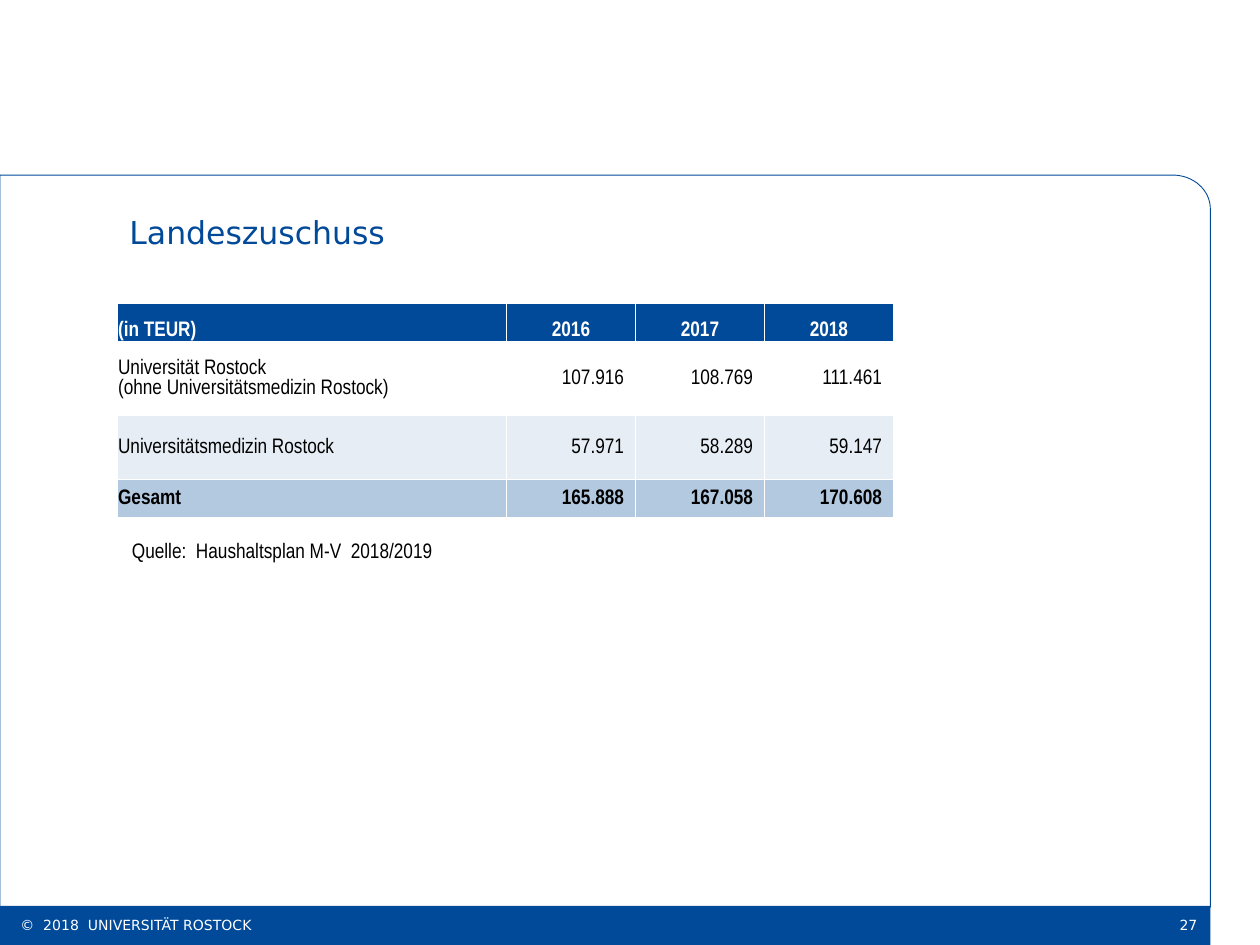
from dataclasses import dataclass
from math import cos, pi, sin

from lxml.etree import SubElement
from pptx import Presentation
from pptx.dml.color import RGBColor
from pptx.enum.shapes import MSO_SHAPE
from pptx.enum.text import MSO_ANCHOR, PP_ALIGN
from pptx.oxml.ns import qn
from pptx.util import Cm, Pt

BLUE, WHITE, BLACK = "004A99", "FFFFFF", "000000"
SANS, SLIM = "DejaVu Sans", "Arial Narrow"
LEFT, MID, RIGHT = PP_ALIGN.LEFT, PP_ALIGN.CENTER, PP_ALIGN.RIGHT


@dataclass
class Label:
    text: str
    box: tuple
    size: int
    face: str
    tint: str
    align: PP_ALIGN = LEFT
    anchor: MSO_ANCHOR = MSO_ANCHOR.TOP
    inset: float = 0.25


@dataclass
class Row:
    cells: tuple
    height: float
    fill: str = ""
    tint: str = BLACK
    bold: bool = False
    head: bool = False


def color(tint: str) -> RGBColor:
    return RGBColor.from_string(tint)


def style(para, size: int, face: str, tint: str, align, bold: bool = False) -> None:
    para.alignment = align
    font = para.font
    font.size, font.name, font.bold = Pt(size), face, bold
    font.color.rgb = color(tint)


def write(shape, label: Label) -> None:
    shape.left, shape.top, shape.width, shape.height = map(Cm, label.box)
    frame = shape.text_frame
    frame.word_wrap = True
    frame.vertical_anchor = label.anchor
    frame.margin_left = Cm(label.inset)
    frame.text = label.text
    style(frame.paragraphs[0], label.size, label.face, label.tint, label.align)


def add_label(slide, label: Label) -> None:
    write(slide.shapes.add_textbox(0, 0, 0, 0), label)


def add_bar(slide) -> None:
    bar = slide.shapes.add_shape(MSO_SHAPE.RECTANGLE, 0, Cm(18.26), Cm(24.4), Cm(0.79))
    bar.shadow.inherit = False
    bar.fill.solid()
    bar.fill.fore_color.rgb = color(BLUE)
    bar.line.fill.background()


def add_frame(slide, top: float, right: float, low: float) -> None:
    """Outline whose upper right corner is a quarter ellipse."""
    wide, high, steps = 0.76, 0.68, 16
    turns = [pi / 2 * (1 - i / steps) for i in range(steps + 1)]
    arc = [(right - wide + wide * cos(t), top + high - high * sin(t)) for t in turns]
    path = slide.shapes.build_freeform(0, Cm(top))
    path.add_line_segments([(Cm(x), Cm(y)) for x, y in arc + [(right, low), (0, low)]])
    shape = path.convert_to_shape()
    shape.shadow.inherit = False
    shape.fill.background()
    shape.line.color.rgb = color(BLUE)
    shape.line.width = Pt(0.5)


def add_edges(cell) -> None:
    """White lines left and right; they must precede the cell fill."""
    props = cell._tc.get_or_add_tcPr()
    for side in ("a:lnL", "a:lnR"):
        line = SubElement(props, qn(side), w=str(Pt(0.5)))
        fill = SubElement(line, qn("a:solidFill"))
        SubElement(fill, qn("a:srgbClr"), val=WHITE)


def fill_cell(cell, text: str, row: Row, first: bool) -> None:
    add_edges(cell)
    if row.fill:
        cell.fill.solid()
        cell.fill.fore_color.rgb = color(row.fill)
    else:
        cell.fill.background()
    align = LEFT if first else MID if row.head else RIGHT
    cell.margin_left = cell.margin_top = Cm(0.02)
    cell.margin_right = Cm(0.23 if align == RIGHT else 0.02)
    cell.margin_bottom = 0
    cell.vertical_anchor = MSO_ANCHOR.BOTTOM if row.head else MSO_ANCHOR.MIDDLE
    cell.text = text
    style(cell.text_frame.paragraphs[0], 12, SLIM, row.tint, align, row.bold)


def add_grid(slide, rows: list[Row], widths: list[float]) -> None:
    high = sum(row.height for row in rows)
    table = slide.shapes.add_table(
        len(rows), len(widths), Cm(2.36), Cm(6.12), Cm(sum(widths)), Cm(high)
    ).table
    for col, width in zip(table.columns, widths):
        col.width = Cm(width)
    for r, row in enumerate(rows):
        table.rows[r].height = Cm(row.height)
        for c, text in enumerate(row.cells):
            fill_cell(table.cell(r, c), text, row, c == 0)


ROWS = [
    Row(("(in TEUR)", "2016", "2017", "2018"), 0.76, BLUE, WHITE, True, True),
    Row(("Universität Rostock\v(ohne Universitätsmedizin Rostock)",
         "107.916", "108.769", "111.461"), 1.5),
    Row(("Universitätsmedizin Rostock", "57.971", "58.289", "59.147"), 1.29, "E6EDF5"),
    Row(("Gesamt", "165.888", "167.058", "170.608"), 0.76, "B3C9E0", bold=True),
]
TITLE = Label("Landeszuschuss", (2.36, 4.17, 21.06, 1.02), 18, SANS, BLUE)
NOTES = [
    Label("Quelle:  Haushaltsplan M-V  2018/2019", (2.41, 10.72, 14, 1.3), 12, SLIM, BLACK),
    Label("27", (22.43, 18.24, 1.96, 0.81), 8, SANS, WHITE, RIGHT, MSO_ANCHOR.MIDDLE),
    Label("©  2018  UNIVERSITÄT ROSTOCK", (0.41, 18.24, 21.54, 0.81), 8, SANS, WHITE,
          anchor=MSO_ANCHOR.MIDDLE, inset=0),
]


def main() -> None:
    deck = Presentation()
    deck.slide_width, deck.slide_height = Cm(25.4), Cm(19.05)
    slide = deck.slides.add_slide(deck.slide_layouts[5])
    # Page frame and footer bar
    add_bar(slide)
    add_frame(slide, 3.53, 24.4, 18.29)
    # Title, source and footer texts
    write(slide.shapes.title, TITLE)
    for note in NOTES:
        add_label(slide, note)
    # Grant table
    add_grid(slide, ROWS, [7.85] + [2.6] * 3)
    deck.save("out.pptx")


if __name__ == "__main__":
    main()
